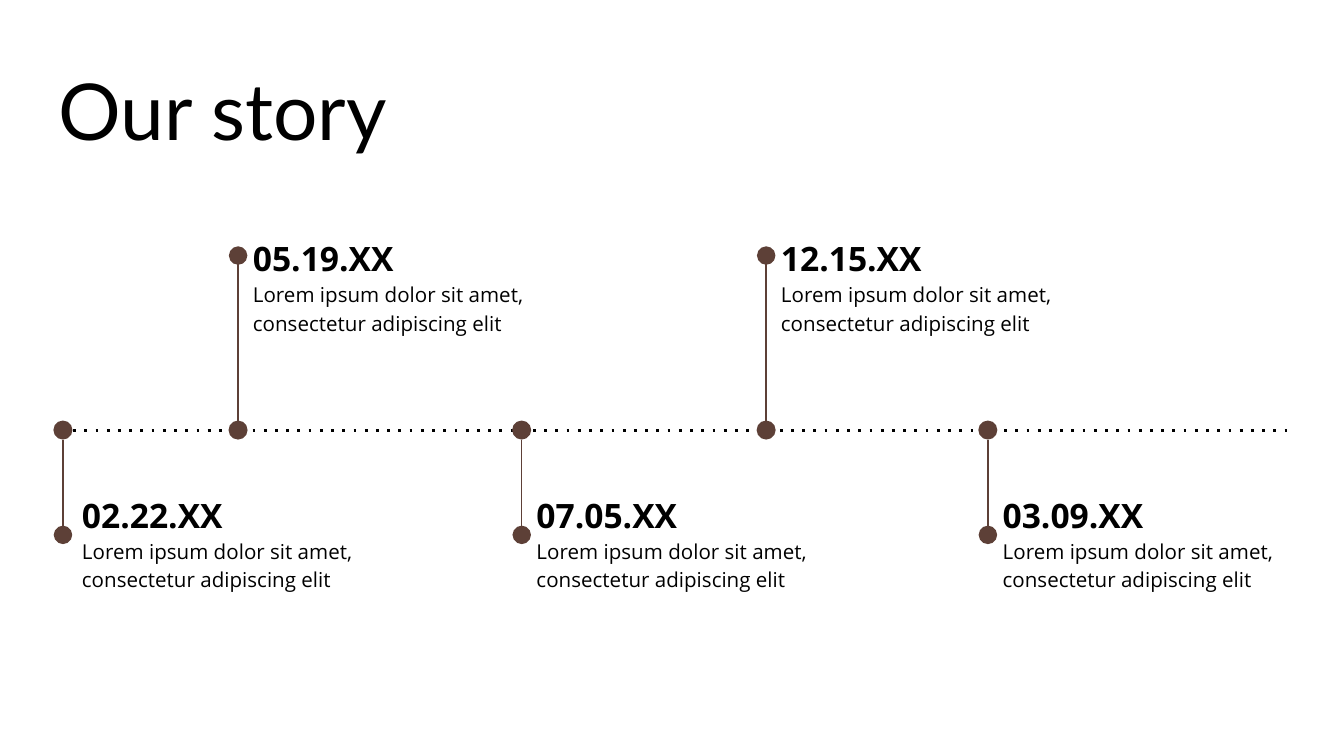
from dataclasses import dataclass

from lxml.etree import SubElement
from pptx import Presentation
from pptx.dml.color import RGBColor
from pptx.enum.shapes import MSO_CONNECTOR, MSO_SHAPE
from pptx.enum.text import MSO_ANCHOR
from pptx.oxml.ns import qn
from pptx.util import Cm, Pt


@dataclass(frozen=True)
class Theme:
    ink: RGBColor = RGBColor(0x00, 0x00, 0x00)
    accent: RGBColor = RGBColor(0x5D, 0x40, 0x37)
    paper: RGBColor = RGBColor(0xFF, 0xFF, 0xFF)
    heading_font: str = "Lato"
    body_font: str = "Open Sans"
    title_size: float = 42
    date_size: float = 18
    body_size: float = 11
    spine_width: float = 1.5
    stem_width: float = 0.75


SPINE_Y = 8.13
DOT = 0.36
BODY = "Lorem ipsum dolor sit amet, consectetur adipiscing elit"
EVENTS = [
    ("02.22.XX", 1.19, 0.11),
    ("05.19.XX", 4.5, 0.03),
    ("07.05.XX", 9.86, 0.03),
    ("12.15.XX", 14.48, 0.03),
    ("03.09.XX", 18.67, 0.03),
]


def write(para, text, *, font, size, color, bold=False, spacing=1.0):
    para.line_spacing = spacing
    span = para.add_run()
    span.text = text
    span.font.name = font
    span.font.size = Pt(size)
    span.font.bold = bold
    span.font.color.rgb = color


class Timeline:
    """Draws the elements of a timeline on one page in one theme."""

    def __init__(self, page, theme):
        self.page = page
        self.theme = theme
        page.background.fill.solid()
        page.background.fill.fore_color.rgb = theme.paper

    def frame(self, left, top, width, height, anchor=MSO_ANCHOR.TOP):
        box = self.page.shapes.add_textbox(Cm(left), Cm(top), Cm(width), Cm(height))
        frame = box.text_frame
        frame.word_wrap = True
        frame.vertical_anchor = anchor
        frame.margin_left = frame.margin_right = Cm(0.25)
        frame.margin_top = frame.margin_bottom = Cm(0.25)
        return frame

    def title(self, text):
        frame = self.frame(0.86, 0.89, 23.67, 2.31, MSO_ANCHOR.BOTTOM)
        write(frame.paragraphs[0], text, font=self.theme.heading_font,
              size=self.theme.title_size, color=self.theme.ink)

    def line(self, start, end, color, width, ending, **attributes):
        points = [Cm(value) for value in (*start, *end)]
        line = self.page.shapes.add_connector(MSO_CONNECTOR.STRAIGHT, *points)
        line.line.color.rgb = color
        line.line.width = Pt(width)
        properties = line._element.spPr
        SubElement(properties.find(qn("a:ln")), qn(ending), attributes)
        SubElement(properties, qn("a:effectLst"))

    def spine(self):
        self.line((1.17, SPINE_Y), (24.33, SPINE_Y), self.theme.ink,
                  self.theme.spine_width, "a:prstDash", val="dot")

    def dot(self, x):
        dot = self.page.shapes.add_shape(
            MSO_SHAPE.OVAL, Cm(x - DOT / 2), Cm(SPINE_Y - DOT / 2), Cm(DOT), Cm(DOT))
        dot.shadow.inherit = False
        dot.fill.solid()
        dot.fill.fore_color.rgb = self.theme.accent
        dot.line.fill.background()

    def stem(self, x, above):
        start, end = (SPINE_Y - DOT / 2, 4.83) if above else (SPINE_Y + DOT / 2, 10.11)
        self.line((x, start), (x, end), self.theme.accent, self.theme.stem_width,
                  "a:tailEnd", type="oval", w="lg", len="lg")

    def caption(self, left, above, date, body):
        top, height = (4.14, 3.05) if above else (8.99, 3.35)
        frame = self.frame(left, top, 6.05, height)
        style = {"font": self.theme.body_font, "color": self.theme.ink, "spacing": 1.15}
        write(frame.paragraphs[0], date, size=self.theme.date_size, bold=True, **style)
        write(frame.add_paragraph(), body, size=self.theme.body_size, **style)

    def event(self, date, x, gap, above):
        self.dot(x)
        self.stem(x, above)
        self.caption(x + gap, above, date, BODY)


def main():
    deck = Presentation()
    deck.slide_width, deck.slide_height = Cm(25.4), Cm(14.29)
    timeline = Timeline(deck.slides.add_slide(deck.slide_layouts[6]), Theme())
    timeline.spine()
    timeline.title("Our story")
    for index, (date, x, gap) in enumerate(EVENTS):
        timeline.event(date, x, gap, above=index % 2 == 1)
    deck.save("out.pptx")


if __name__ == "__main__":
    main()
